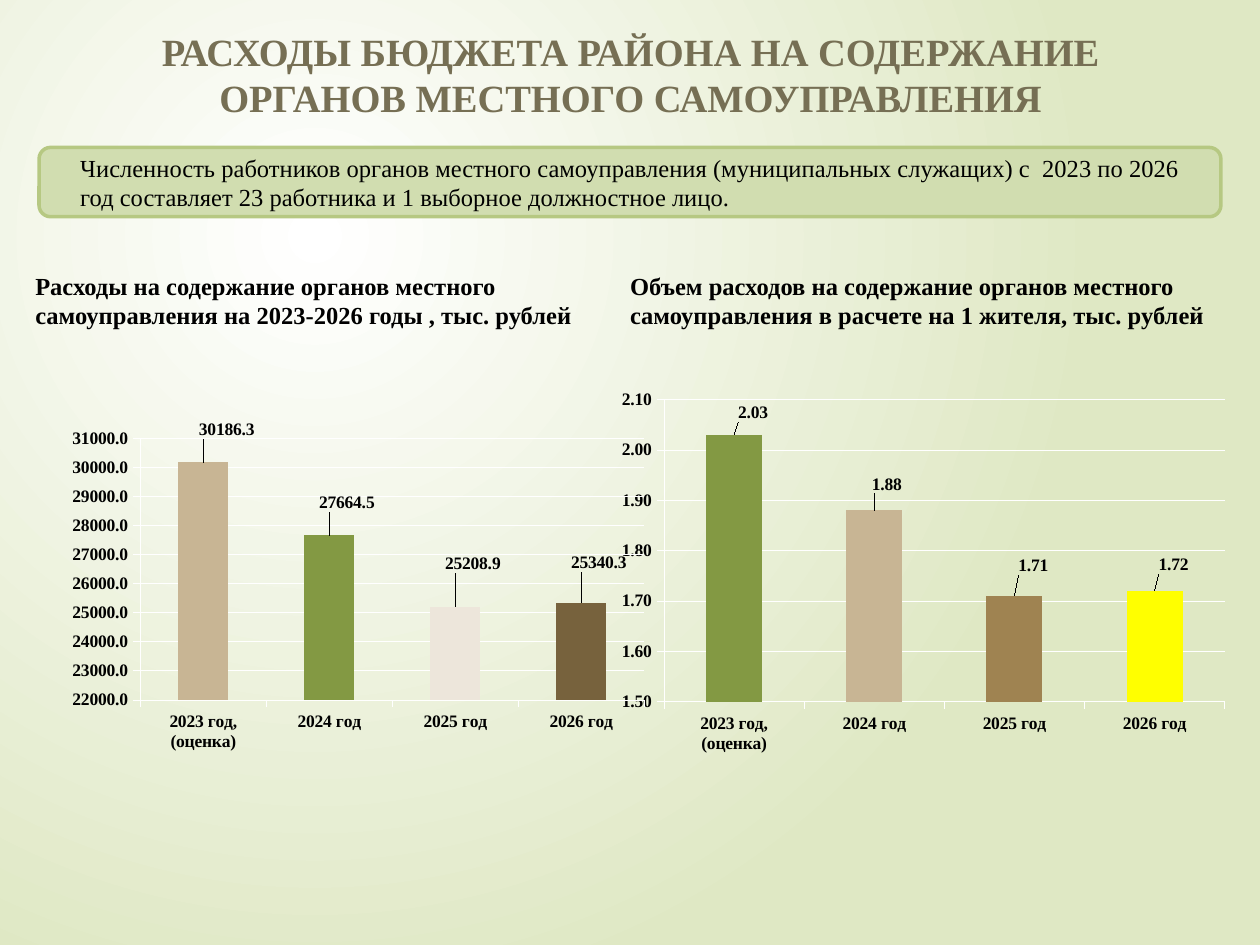
from dataclasses import dataclass

from lxml.etree import SubElement
from pptx import Presentation
from pptx.chart.data import CategoryChartData
from pptx.dml.color import RGBColor
from pptx.enum.chart import XL_CHART_TYPE as ChartType
from pptx.enum.chart import XL_LABEL_POSITION as LabelPosition
from pptx.enum.chart import XL_TICK_MARK as TickMark
from pptx.enum.shapes import MSO_SHAPE as Shape
from pptx.enum.text import MSO_ANCHOR as Anchor
from pptx.enum.text import MSO_AUTO_SIZE as AutoSize
from pptx.enum.text import PP_ALIGN as Align
from pptx.oxml import parse_xml
from pptx.oxml.ns import nsdecls, qn
from pptx.util import Inches, Pt


@dataclass(frozen=True)
class Theme:
    font: str = "Times New Roman"
    title_size: int = 22
    body_size: int = 14
    chart_size: int = 10
    title: str = "766F54"
    text: str = "000000"
    white: str = "FFFFFF"
    backdrop: str = "DFE8C4"
    note_fill: str = "D1DDB0"
    note_line: str = "B6C882"
    green: str = "839943"
    sand: str = "C8B594"
    brown: str = "9F8351"
    yellow: str = "FFFF00"
    cream: str = "EDE6DB"
    umber: str = "77623D"


def color(value):
    return RGBColor.from_string(value)


def apply(target, values):
    for name, value in values.items():
        setattr(target, name, value)


class SlideBuilder:
    def __init__(self, theme, page):
        self.theme = theme
        self.page = page

    def style_font(self, font, size, shade, bold=True):
        apply(font, {"name": self.theme.font, "size": Pt(size), "bold": bold})
        font.color.rgb = color(shade)

    def place(self, shape, area):
        names = ("left", "top", "width", "height")
        apply(shape, dict(zip(names, map(Inches, area))))

    def background(self):
        fill = self.page.background.fill
        fill.gradient()
        shades = (self.theme.white, self.theme.backdrop)
        for stop, position, shade in zip(fill.gradient_stops, (0, 1), shades):
            stop.position = position
            stop.color.rgb = color(shade)
        # Swap the linear direction for a circle centred in the upper left
        gradient = self.page.element.find(".//" + qn("a:gradFill"))
        gradient.replace(gradient.find(qn("a:lin")), parse_xml(
            f'<a:path {nsdecls("a")} path="circle"><a:fillToRect l="50000" '
            't="50000" r="100000" b="100000"/></a:path>'))

    def set_text(self, shape, text, size, shade, bold=True, align=Align.LEFT,
                 anchor=Anchor.TOP, inset=0.1):
        frame = shape.text_frame
        apply(frame, {
            "word_wrap": True, "auto_size": AutoSize.NONE,
            "vertical_anchor": anchor,
            "margin_left": Inches(inset), "margin_right": Inches(inset),
        })
        para = frame.paragraphs[0]
        apply(para, {"alignment": align, "space_before": Pt(0)})
        span = para.add_run()
        span.text = text
        self.style_font(span.font, size, shade, bold)

    def title(self, text, area):
        box = self.page.shapes.title
        self.place(box, area)
        self.set_text(box, text, self.theme.title_size, self.theme.title,
                      align=Align.CENTER)

    def heading(self, index, text, area):
        box = self.page.placeholders[index]
        self.place(box, area)
        self.set_text(box, text, self.theme.body_size, self.theme.text)

    def note(self, text, area):
        box = self.page.shapes.add_shape(
            Shape.ROUNDED_RECTANGLE, *map(Inches, area))
        box.shadow.inherit = False
        box.fill.solid()
        box.fill.fore_color.rgb = color(self.theme.note_fill)
        box.line.color.rgb = color(self.theme.note_line)
        box.line.width = Pt(2)
        self.set_text(box, text, self.theme.body_size, self.theme.text, False,
                      Align.JUSTIFY, Anchor.MIDDLE, 0.3)

    def thin_line(self, line):
        line.color.rgb = color(self.theme.white)
        line.width = Pt(0.25)

    def manual_layout(self, parent, position, values):
        """Put a manual layout into a chart part, replacing any present."""
        for old in parent.findall(qn("c:layout")):
            parent.remove(old)
        layout = parse_xml(f'<c:layout {nsdecls("c")}><c:manualLayout/></c:layout>')
        for tag, value in values.items():
            SubElement(layout[0], qn(f"c:{tag}")).set("val", str(value))
        parent.insert(position, layout)

    def column_chart(self, area, years, values, shades, number_format,
                     scale, plot_area, label_shifts):
        data = CategoryChartData(number_format=number_format)
        data.categories = years
        data.add_series("Series 1", values)
        chart = self.page.shapes.add_chart(
            ChartType.COLUMN_CLUSTERED, *map(Inches, area), data).chart
        apply(chart, {"has_legend": False, "has_title": False})
        self.style_font(chart.font, self.theme.chart_size, self.theme.text)

        # Axes
        for axis in (chart.category_axis, chart.value_axis):
            apply(axis, {"major_tick_mark": TickMark.OUTSIDE,
                         "minor_tick_mark": TickMark.NONE})
            self.style_font(axis.tick_labels.font, self.theme.chart_size,
                            self.theme.text)
            self.thin_line(axis.format.line)
        low, high, step = scale
        apply(chart.value_axis, {"minimum_scale": low, "maximum_scale": high,
                                 "major_unit": step, "has_major_gridlines": True})
        self.thin_line(chart.value_axis.major_gridlines.format.line)
        apply(chart.value_axis.tick_labels, {
            "number_format": number_format, "number_format_is_linked": False})

        # Columns and their labels
        plot = chart.plots[0]
        apply(plot, {"gap_width": 150, "vary_by_categories": False})
        series = plot.series[0]
        apply(series.data_labels, {
            "show_value": True, "number_format": number_format,
            "number_format_is_linked": False})
        for index, shade in enumerate(shades):
            point = series.points[index]
            point.format.fill.solid()
            point.format.fill.fore_color.rgb = color(shade)
            point.format.line.fill.background()
            label = point.data_label
            self.style_font(label.font, self.theme.chart_size, self.theme.text)
            label.position = LabelPosition.OUTSIDE_END
        labels = series.data_labels._element.findall(qn("c:dLbl"))
        for label, shift in zip(labels, label_shifts):
            self.manual_layout(label, 1, dict(zip("xy", shift)))

        plot_element = chart._chartSpace.chart.plotArea
        self.manual_layout(plot_element, 0, {
            "layoutTarget": "inner", "xMode": "edge", "yMode": "edge",
            **dict(zip("xywh", plot_area))})


def main():
    theme = Theme()
    deck = Presentation()
    deck.slide_width, deck.slide_height = Inches(10), Inches(7.5)
    page = deck.slides.add_slide(deck.slide_layouts.get_by_name("Comparison"))
    # The charts stand free, so only the title and headings stay
    for holder in list(page.placeholders):
        if holder.placeholder_format.idx not in (0, 1, 3):
            holder.element.getparent().remove(holder.element)

    builder = SlideBuilder(theme, page)
    builder.background()
    builder.title("РАСХОДЫ БЮДЖЕТА РАЙОНА НА СОДЕРЖАНИЕ ОРГАНОВ МЕСТНОГО "
                  "САМОУПРАВЛЕНИЯ", (0.51, 0.17, 8.99, 0.9))
    builder.note("Численность работников органов местного самоуправления "
                 "(муниципальных служащих) с  2023 по 2026 год составляет "
                 "23 работника и 1 выборное должностное лицо.",
                 (0.31, 1.17, 9.38, 0.55))
    builder.heading(1, "Расходы на содержание органов местного самоуправления "
                    "на 2023-2026 годы , тыс. рублей", (0.18, 2.1, 4.72, 0.57))
    builder.heading(3, "Объем расходов на содержание органов местного "
                    "самоуправления в расчете на 1 жителя, тыс. рублей",
                    (4.9, 2.1, 4.94, 0.57))

    years = ["2023 год, (оценка)", "2024 год", "2025 год", "2026 год"]
    # Spending per resident
    builder.column_chart(
        (4.82, 3.02, 5, 3), years, (2.03, 1.88, 1.71, 1.72),
        (theme.green, theme.sand, theme.brown, theme.yellow), "0.00",
        (1.5, 2.1, 0.1), (0.09, 0.05, 0.89, 0.8),
        ((0.03, -0.02), (0.02, -0.03), (0.03, -0.04), (0.03, -0.03)))
    # Total spending
    builder.column_chart(
        (0.51, 3.33, 4.65, 2.85), years, (30186.3, 27664.5, 25208.9, 25340.3),
        (theme.sand, theme.green, theme.cream, theme.umber), "0.0",
        (22000, 31000, 1000), (0.13, 0.05, 0.86, 0.73),
        ((0.04, -0.05), (0.03, -0.05), (0.03, -0.08), (0.03, -0.07)))
    deck.save("out.pptx")


if __name__ == "__main__":
    main()
